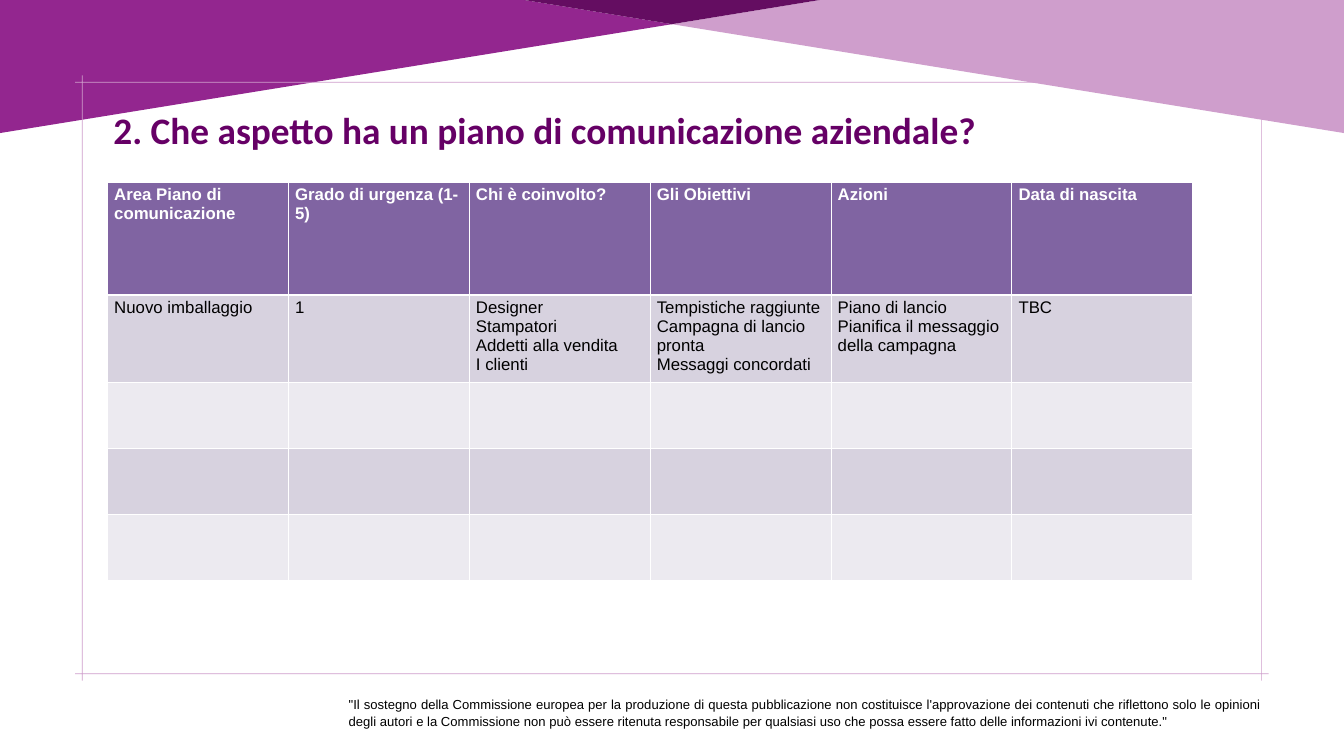
from lxml.etree import SubElement
from pptx import Presentation
from pptx.dml.color import RGBColor as Rgb
from pptx.enum.text import MSO_AUTO_SIZE as Fit, PP_ALIGN as Align
from pptx.oxml.ns import qn
from pptx.util import Emu, Pt

PX = 9144
HUE = {
    "plum": "93268F", "pink": "CF9ECC", "dark": "640D61", "title": "660066",
    "head": "8064A2", "odd": "D7D2DF", "even": "ECEAF0",
    "white": "FFFFFF", "black": "000000",
}
TITLE = "2. Che aspetto ha un piano di comunicazione aziendale?"
NOTE = (
    "\"Il sostegno della Commissione europea per la produzione di questa "
    "pubblicazione non costituisce l'approvazione dei contenuti che riflettono "
    "solo le opinioni degli autori e la Commissione non può essere ritenuta "
    "responsabile per qualsiasi uso che possa essere fatto delle informazioni "
    "ivi contenute.\""
)
ROWS = [
    ["Area Piano di comunicazione", "Grado di urgenza (1-5)", "Chi è coinvolto?",
     "Gli Obiettivi", "Azioni", "Data di nascita"],
    ["Nuovo imballaggio", "1",
     "Designer\nStampatori\nAddetti alla vendita\nI clienti",
     "Tempistiche raggiunte\nCampagna di lancio pronta\nMessaggi concordati",
     "Piano di lancio\nPianifica il messaggio della campagna", "TBC"],
    [""] * 6, [""] * 6, [""] * 6,
]


def px(*nums):
    """Turn px lengths into EMU."""
    return [Emu(n * PX) for n in nums]


def tint(name):
    """Return the colour of that name."""
    return Rgb.from_string(HUE[name])


def style(frame, face, size, hue, bold=False):
    """Format every paragraph of a text frame."""
    for para in frame.paragraphs:
        font = para.font
        font.name, font.size, font.bold = face, Pt(size), bold
        font.color.rgb = tint(hue)


def add_area(slide, box, hue, *loops):
    """Draw a filled outline of closed loops with points relative to the box."""
    left, top = box[:2]
    spots = [[(left + x, top + y) for x, y in loop] for loop in loops]
    pen = slide.shapes.build_freeform(*spots[0][0], scale=PX)
    for n, loop in enumerate(spots):
        if n:
            pen.move_to(*loop[0])
        pen.add_line_segments(loop[1:], close=True)
    area = pen.convert_to_shape()
    area.shadow.inherit = False
    area.fill.solid()
    area.fill.fore_color.rgb = tint(hue)
    area.line.fill.background()


def add_left(slide, box):
    """Draw the left band, whose slope ends at the middle."""
    wide, high = box[2:]
    add_area(slide, box, "plum", [(0, high), (0, 0), (780, 0), (wide, 36)])


def add_right(slide, box):
    """Draw the right band and the dark wedge where the bands cross."""
    wide, high = box[2:]
    add_area(slide, box, "pink", [(wide, high), (0, 36), (220, 0), (wide, 0)])
    add_area(slide, box, "dark", [(0, 36), (-220, 0), (220, 0)])


def add_frame(slide, box, arm):
    """Draw a hairline frame whose sides cross at the corners."""
    wide, high = box[2:]
    near = arm + 1
    nook = [(arm, near), (0, near), (0, arm), (arm, arm),
            (arm, 0), (near, 0), (near, arm)]
    outer = nook + [(wide - x, y) for x, y in reversed(nook)]
    outer += [(wide - x, high - y) for x, y in nook]
    outer += [(x, high - y) for x, y in reversed(nook)]
    right, low = wide - near, high - near
    inner = [(near, near), (near, low), (right, low), (right, near)]
    add_area(slide, box, "pink", outer, inner)


def add_text(slide, box, text, face, size, hue, bold=False):
    """Place a wrapped text box and return its paragraph."""
    frame = slide.shapes.add_textbox(*px(*box)).text_frame
    frame.word_wrap = True
    frame.auto_size = Fit.SHAPE_TO_FIT_TEXT
    frame.text = text
    style(frame, face, size, hue, bold)
    return frame.paragraphs[0]


def add_note(slide, box):
    """Place the justified disclaimer."""
    para = add_text(slide, box, NOTE, "Arial", 14, "black")
    para.alignment = Align.JUSTIFY
    para.line_spacing = 1.07
    para._p.get_or_add_pPr().set("marL", str(PX))


def add_edges(cell, row):
    """Give a cell white borders, thick below the header."""
    props = cell._tc.get_or_add_tcPr()
    for side in "LRTB":
        thick = (row, side) in ((0, "B"), (1, "T"))
        edge = SubElement(props, qn(f"a:ln{side}"), w=str(Pt(3 if thick else 1)))
        fill = SubElement(edge, qn("a:solidFill"))
        SubElement(fill, qn("a:srgbClr"), val=HUE["white"])


def add_plan(slide, box):
    """Build the plan table with a header and banded rows."""
    table = slide.shapes.add_table(len(ROWS), len(ROWS[0]), *px(*box)).table
    for r, texts in enumerate(ROWS):
        head = r == 0
        table.rows[r].height = px(168 if head else 98)[0]
        band = "head" if head else "odd" if r % 2 else "even"
        for c, text in enumerate(texts):
            cell = table.cell(r, c)
            add_edges(cell, r)
            cell.fill.solid()
            cell.fill.fore_color.rgb = tint(band)
            cell.text_frame.text = text
            style(cell.text_frame, "Arial", 18, "white" if head else "black", head)


def main():
    """Build the slide and save it."""
    deck = Presentation()
    deck.slide_width, deck.slide_height = px(2000, 1125)
    slide = deck.slides.add_slide(deck.slide_layouts[6])
    add_left(slide, (0, 0, 1000, 198))
    add_frame(slide, (112, 112, 1776, 901), 10)
    add_note(slide, (508, 1030, 1379, 52))
    add_right(slide, (1000, 0, 1000, 198))
    add_text(slide, (159, 154, 1350, 77), TITLE, "Calibri", 40, "title", True)
    add_plan(slide, (160, 271, 1615, 560))
    deck.save("out.pptx")


if __name__ == "__main__":
    main()
